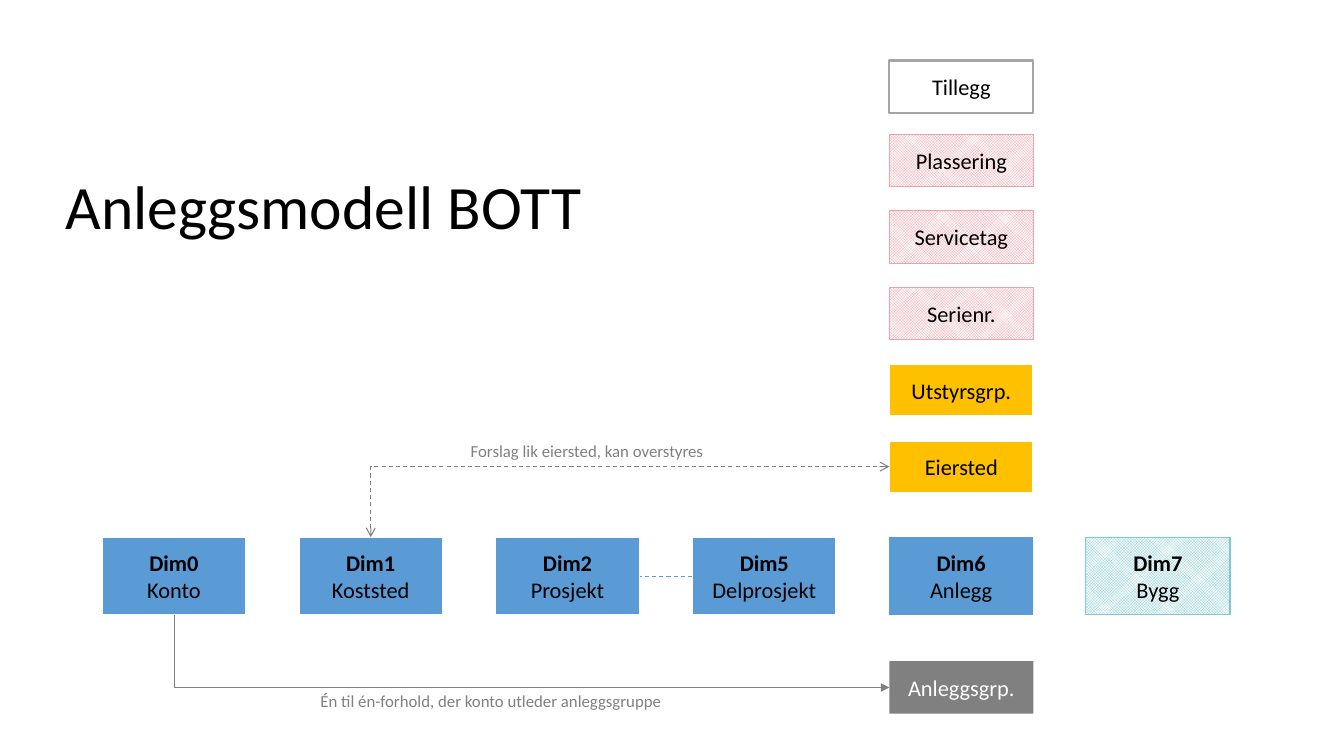
from dataclasses import dataclass
from lxml.etree import SubElement
from pptx import Presentation
from pptx.dml.color import RGBColor
from pptx.enum.dml import MSO_LINE as Dash, MSO_PATTERN as Pattern
from pptx.enum.shapes import MSO_CONNECTOR as Link, MSO_SHAPE as Shape
from pptx.enum.text import MSO_ANCHOR as Anchor, MSO_AUTO_SIZE as AutoSize, PP_ALIGN as Align
from pptx.oxml.ns import qn
from pptx.util import Inches, Pt


@dataclass(frozen=True)
class Theme:
    font: str = "Calibri"
    title_size: int = 44
    box_size: int = 16
    note_size: int = 12
    black: str = "000000"
    white: str = "FFFFFF"
    grey: str = "808080"
    silver: str = "A5A5A5"
    blue: str = "5B9BD5"
    teal: str = "7FCBD5"
    pink: str = "F39FA9"
    amber: str = "FFC000"


theme = Theme()

# Content
TITLE = "Anleggsmodell BOTT"

# Style: fill, line colour, line width, text colour, patterned
STYLES = {
    "dimension": (theme.blue, theme.white, 1.5, theme.black, False),
    "asset": (theme.blue, None, 0, theme.black, False),
    "building": (theme.teal, theme.teal, 0.75, theme.black, True),
    "extra": (theme.white, theme.silver, 1.5, theme.black, False),
    "detail": (theme.pink, theme.pink, 0.75, theme.black, True),
    "owner": (theme.amber, theme.white, 1.5, theme.black, False),
    "group": (theme.grey, None, 0, theme.white, False),
}
DIMENSIONS = [
    ("Dim0", "Konto", "dimension"),
    ("Dim1", "Koststed", "dimension"),
    ("Dim2", "Prosjekt", "dimension"),
    ("Dim5", "Delprosjekt", "dimension"),
    ("Dim6", "Anlegg", "asset"),
    ("Dim7", "Bygg", "building"),
]
ATTRIBUTES = [
    ("Plassering", "detail"),
    ("Servicetag", "detail"),
    ("Serienr.", "detail"),
    ("Utstyrsgrp.", "owner"),
    ("Eiersted", "owner"),
]
NOTES = [
    ("Én til én-forhold, der konto utleder anleggsgruppe", 3.08, 6.8, 3.88),
    ("Forslag lik eiersted, kan overstyres", 4.57, 4.32, 2.8),
]

# Layout in inches
BOX_WIDTH, DIMENSION_HEIGHT, ATTRIBUTE_HEIGHT = 1.43, 0.77, 0.52
ROW_LEFT, ROW_RIGHT, ROW_TOP = 1.01, 10.77, 5.33
ROW_STEP = (ROW_RIGHT - ROW_LEFT) / (len(DIMENSIONS) - 1)
STACK_LEFT, STACK_TOP, STACK_STEP = 8.82, 1.33, 0.76
EXTRA_TOP, GROUP_TOP = 0.6, 6.56
TOP, LEFT, BOTTOM, RIGHT = range(4)


def color(value):
    return RGBColor.from_string(value)


def format_text(paragraph, size, value, bold=False):
    for span in paragraph.runs:
        span.font.name = theme.font
        span.font.size = Pt(size)
        span.font.bold = bold
        span.font.color.rgb = color(value)


def add_box(page, lines, style, left, top, height=ATTRIBUTE_HEIGHT):
    fill, line, line_width, text_color, patterned = STYLES[style]
    box = page.shapes.add_shape(Shape.RECTANGLE, Inches(left), Inches(top),
                                Inches(BOX_WIDTH), Inches(height))
    box.shadow.inherit = False
    if patterned:
        box.fill.patterned()
        box.fill.pattern = Pattern.SMALL_CHECKER_BOARD
        box.fill.back_color.rgb = color(theme.white)
    else:
        box.fill.solid()
    box.fill.fore_color.rgb = color(fill)
    if line:
        box.line.color.rgb = color(line)
        box.line.width = Pt(line_width)
    else:
        box.line.fill.background()
    frame = box.text_frame
    frame.word_wrap = True
    frame.vertical_anchor = Anchor.MIDDLE
    frame.text = "\n".join(lines)
    for index, para in enumerate(frame.paragraphs):
        para.alignment = Align.CENTER
        format_text(para, theme.box_size, text_color, bold=index < len(lines) - 1)
    return box


def add_link(page, kind, start, start_side, end, end_side, line, width,
             dashed=False, head=None, tail=None):
    link = page.shapes.add_connector(kind, 0, 0, 0, 0)
    link.begin_connect(start, start_side)
    link.end_connect(end, end_side)
    link.line.color.rgb = color(line)
    link.line.width = Pt(width)
    if dashed:
        link.line.dash_style = Dash.DASH
    properties = link.element.spPr
    outline = properties.find(qn("a:ln"))
    for tag, arrow in (("a:headEnd", head), ("a:tailEnd", tail)):
        if arrow:
            SubElement(outline, qn(tag), type=arrow)
    SubElement(properties, qn("a:effectLst"))
    return link


def bend_once(link):
    """Turn the link into one corner: first vertical, then to the right."""
    upward = link.end_y < link.begin_y
    run, rise = link.width, link.height
    middle_x, middle_y = link.left + run // 2, link.top + rise // 2
    link.left, link.top = middle_x - rise // 2, middle_y - run // 2
    link.width, link.height = rise, run
    properties = link.element.spPr
    properties.find(qn("a:prstGeom")).set("prst", "bentConnector2")
    frame = properties.find(qn("a:xfrm"))
    frame.set("rot", str((90 if upward else 270) * 60000))
    frame.set("flipH", "1")
    frame.set("flipV", "1" if upward else "0")


def main():
    deck = Presentation()
    deck.slide_width, deck.slide_height = Inches(13.33), Inches(7.5)
    page = deck.slides.add_slide(deck.slide_layouts[5])

    # Title
    title = page.shapes.title
    title.left, title.top = Inches(0.55), Inches(1.35)
    title.width, title.height = Inches(7.47), Inches(1.45)
    frame = title.text_frame
    frame.text = TITLE
    frame.word_wrap = True
    frame.auto_size = AutoSize.NONE
    frame.vertical_anchor = Anchor.MIDDLE
    para = frame.paragraphs[0]
    para.alignment = Align.LEFT
    para.line_spacing = 0.9
    format_text(para, theme.title_size, theme.black)

    # Row of dimensions
    boxes = {}
    for index, (code, name, style) in enumerate(DIMENSIONS):
        boxes[name] = add_box(page, (code, name), style, ROW_LEFT + index * ROW_STEP,
                              ROW_TOP, DIMENSION_HEIGHT)

    # Stack above and below the asset dimension
    stack = [("Tillegg", "extra", EXTRA_TOP), ("Anleggsgrp.", "group", GROUP_TOP)]
    stack += [(name, style, STACK_TOP + index * STACK_STEP)
              for index, (name, style) in enumerate(ATTRIBUTES)]
    for name, style, top in stack:
        boxes[name] = add_box(page, (name,), style, STACK_LEFT, top)

    # Links
    add_link(page, Link.STRAIGHT, boxes["Delprosjekt"], LEFT, boxes["Prosjekt"], RIGHT,
             theme.blue, 0.75, dashed=True)
    bend_once(add_link(page, Link.ELBOW, boxes["Koststed"], TOP, boxes["Eiersted"], LEFT,
                       theme.grey, 0.75, dashed=True, head="arrow", tail="arrow"))
    bend_once(add_link(page, Link.ELBOW, boxes["Konto"], BOTTOM, boxes["Anleggsgrp."], LEFT,
                       theme.grey, 0.5, tail="triangle"))

    # Notes on the links
    for text, left, top, width in NOTES:
        note = page.shapes.add_textbox(Inches(left), Inches(top), Inches(width), Inches(0.3))
        note.text_frame.text = text
        note.text_frame.word_wrap = False
        note.text_frame.auto_size = AutoSize.SHAPE_TO_FIT_TEXT
        format_text(note.text_frame.paragraphs[0], theme.note_size, theme.grey)

    deck.save("out.pptx")


if __name__ == "__main__":
    main()
